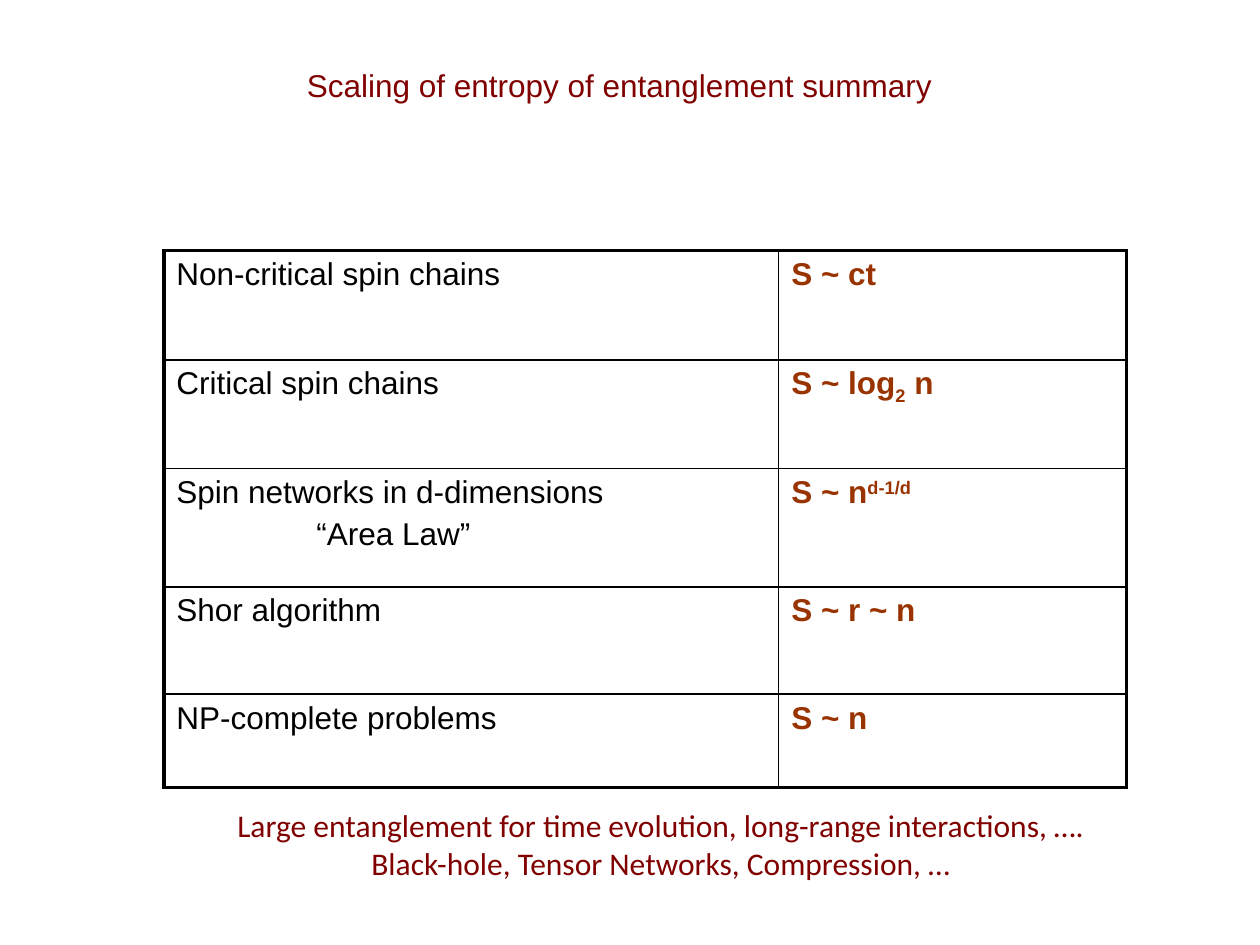
from dataclasses import dataclass

from lxml.etree import SubElement
from pptx import Presentation
from pptx.dml.color import RGBColor
from pptx.enum.text import MSO_ANCHOR, PP_ALIGN
from pptx.oxml.ns import qn
from pptx.util import Pt

COLORS = {"heading": "800000", "formula": "993300", "text": "000000", "border": "000000"}
FONT_SIZE = 18
THIN, THICK = 1, 2.25
COLUMN_WIDTHS = (351.4, 198.7)
AREA_LAW_INDENT = 80


@dataclass
class ScalingRow:
    height: float
    system: str
    formula: list[tuple[str, int]]  # text and baseline shift in percent
    remark: str = ""


ROWS = [
    ScalingRow(62.5, "Non-critical spin chains", [("S ~ ct", 0)]),
    ScalingRow(62, "Critical spin chains", [("S ~ log", 0), ("2", -25), (" n", 0)]),
    ScalingRow(67.7, "Spin networks in d-dimensions", [("S ~ n", 0), ("d-1/d", 30)], "“Area Law”"),
    ScalingRow(61.2, "Shor algorithm", [("S ~ r ~ n", 0)]),
    ScalingRow(53.3, "NP-complete problems", [("S ~ n", 0)]),
]
CLOSING_LINES = [
    "Large entanglement for time evolution, long-range interactions, ….",
    "Black-hole, Tensor Networks, Compression, …",
]


def style(paragraph, color: str, font_name: str = "Arial", bold: bool = False) -> None:
    font = paragraph.font
    font.name, font.size, font.bold = font_name, Pt(FONT_SIZE), bold
    font.color.rgb = RGBColor.from_string(COLORS[color])


def set_borders(cell, widths: dict[str, float]) -> None:
    """Draw the cell's borders; they must come before its fill in the XML."""
    properties = cell._tc.get_or_add_tcPr()
    for position, (side, width) in enumerate(widths.items()):
        line = SubElement(properties, qn(f"a:ln{side}"), w=str(Pt(width)))
        fill = SubElement(line, qn("a:solidFill"))
        SubElement(fill, qn("a:srgbClr"), val=COLORS["border"])
        properties.insert(position, line)


def fill_system(cell, row: ScalingRow) -> None:
    frame = cell.text_frame
    frame.text = row.system
    style(frame.paragraphs[0], "text")
    if row.remark:
        remark = frame.add_paragraph()
        remark.text = row.remark
        remark.space_before = Pt(0.2 * FONT_SIZE)
        remark._p.get_or_add_pPr().set("marL", str(Pt(AREA_LAW_INDENT)))
        style(remark, "text")


def fill_formula(cell, row: ScalingRow) -> None:
    paragraph = cell.text_frame.paragraphs[0]
    style(paragraph, "formula", bold=True)
    for text, shift in row.formula:
        run = paragraph.add_run()
        run.text = text
        if shift:
            run.font._element.set("baseline", str(shift * 1000))


def add_scaling_table(slide) -> None:
    height = sum(row.height for row in ROWS)
    table = slide.shapes.add_table(
        len(ROWS), 2, Pt(93.6), Pt(143.3), Pt(sum(COLUMN_WIDTHS)), Pt(height)
    ).table
    table.first_row = table.horz_banding = False
    for column, width in zip(table.columns, COLUMN_WIDTHS):
        column.width = Pt(width)
    last = len(ROWS) - 1
    for index, row in enumerate(ROWS):
        table.rows[index].height = Pt(row.height)
        system, formula = table.rows[index].cells
        fill_system(system, row)
        fill_formula(formula, row)
        for cell, left, right in ((system, THICK, THIN), (formula, THIN, THICK)):
            cell.fill.background()
            set_borders(cell, {
                "L": left,
                "R": right,
                "T": THICK if index == 0 else THIN,
                "B": THICK if index == last else THIN,
            })


def main() -> None:
    presentation = Presentation()
    presentation.slide_width, presentation.slide_height = Pt(720), Pt(540)
    slide = presentation.slides.add_slide(presentation.slide_layouts[5])

    # Title
    title = slide.shapes.title
    title.left, title.top, title.width, title.height = Pt(30), Pt(3.6), Pt(648), Pt(90)
    title.text_frame.text = "Scaling of entropy of entanglement summary"
    title.text_frame.vertical_anchor = MSO_ANCHOR.MIDDLE
    title.text_frame.paragraphs[0].alignment = PP_ALIGN.CENTER
    style(title.text_frame.paragraphs[0], "heading")

    # Entropy by system
    add_scaling_table(slide)

    # Closing remark
    remark = slide.shapes.add_textbox(Pt(126), Pt(457.2), Pt(503.3), Pt(51))
    remark.text_frame.word_wrap = False
    remark.text_frame.text = "\n".join(CLOSING_LINES)
    for paragraph in remark.text_frame.paragraphs:
        paragraph.alignment = PP_ALIGN.CENTER
        style(paragraph, "heading", "Calibri")

    presentation.save("out.pptx")


if __name__ == "__main__":
    main()
